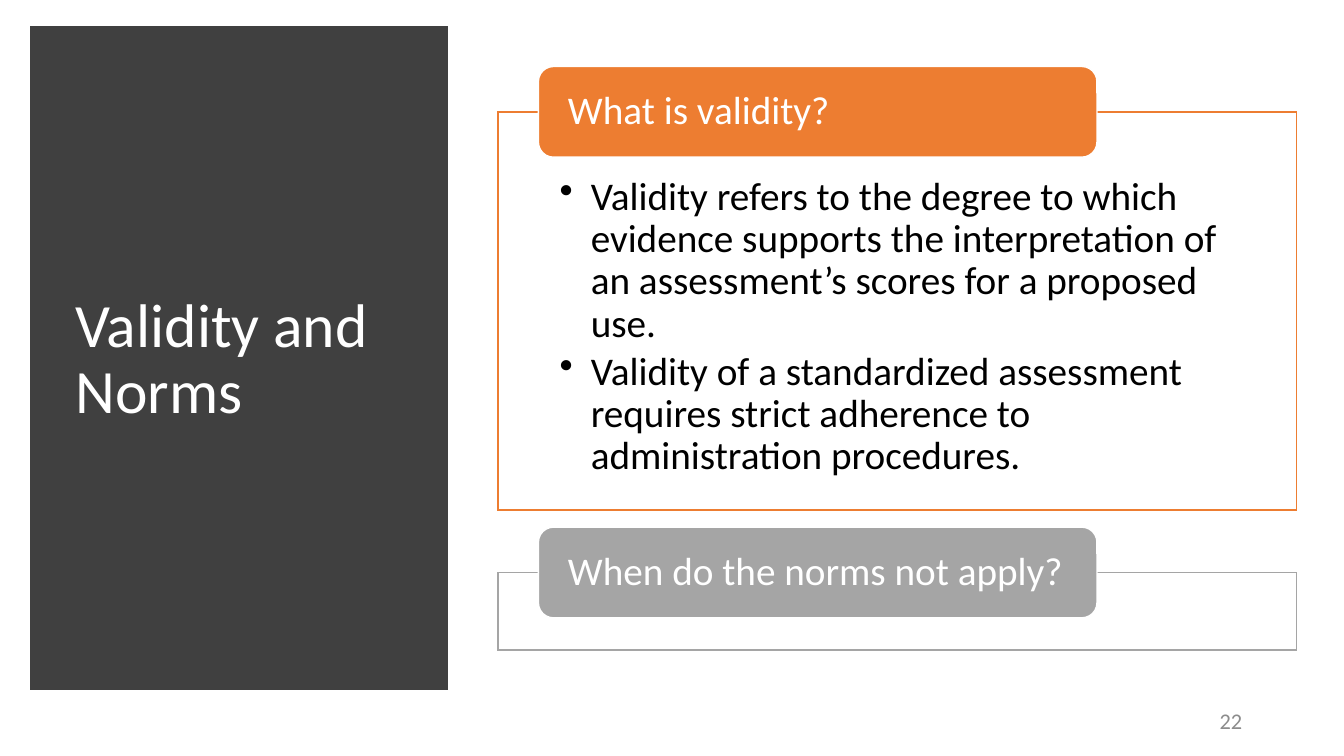
from lxml import etree
from pptx import Presentation
from pptx.dml.color import RGBColor
from pptx.enum.shapes import MSO_SHAPE
from pptx.enum.text import MSO_ANCHOR, PP_ALIGN
from pptx.oxml.ns import qn
from pptx.util import Pt

PX = 9144  # EMU per px, 100 px to the inch
RECT, ROUND = MSO_SHAPE.RECTANGLE, MSO_SHAPE.ROUNDED_RECTANGLE
TOP, MIDDLE = MSO_ANCHOR.TOP, MSO_ANCHOR.MIDDLE
LEFT, RIGHT = PP_ALIGN.LEFT, PP_ALIGN.RIGHT

WHITE = RGBColor(0xFF, 0xFF, 0xFF)
BLACK = RGBColor(0, 0, 0)
DARK = RGBColor(0x40, 0x40, 0x40)
ORANGE = RGBColor(0xED, 0x7D, 0x31)
GRAY = RGBColor(0xA5, 0xA5, 0xA5)
PALE = RGBColor(0x8C, 0x8C, 0x8C)

# Question, colour, frame top and height, bullets
TOPICS = [
    ("What is validity?", ORANGE, 111, 395, [
        "Validity refers to the degree to which evidence supports the "
        "interpretation of an assessment’s scores for a proposed use.",
        "Validity of a standardized assessment requires strict adherence "
        "to administration procedures."]),
    ("When do the norms not apply?", GRAY, 568, 77, []),
]


def add_box(slide, kind, box, fill, line, width=1):
    shape = slide.shapes.add_shape(kind, *(n * PX for n in box))
    shape.shadow.inherit = False
    shape.fill.solid()
    shape.fill.fore_color.rgb = fill
    shape.line.color.rgb = line
    shape.line.width = Pt(width)
    join = etree.SubElement(shape.line._get_or_add_ln(), qn("a:miter"))
    join.set("lim", "800000")
    return shape


def set_text(shape, lines, size, color, pads=(10, 5, 10, 5),
             anchor=MIDDLE, align=LEFT, pitch=0.9):
    frame = shape.text_frame
    frame.word_wrap = True
    frame.vertical_anchor = anchor
    (frame.margin_left, frame.margin_top,
     frame.margin_right, frame.margin_bottom) = (n * PX for n in pads)
    frame.text = "\n".join(lines)
    for par in frame.paragraphs:
        par.alignment = align
        par.line_spacing = pitch
        par.font.name = "Calibri"
        par.font.size = Pt(size)
        par.font.color.rgb = color
    return frame


def add_label(slide, box, text, size, color, **style):
    label = slide.shapes.add_textbox(*(n * PX for n in box))
    set_text(label, [text], size, color, **style)


def add_bullets(frame, indent):
    for par in frame.paragraphs:
        par.space_after = Pt(4)
        props = par._p.get_or_add_pPr()
        props.set("marL", str(indent * PX))
        props.set("indent", str(-indent * PX))
        mark = etree.SubElement(props, qn("a:buChar"))
        mark.set("char", "•")
        # The bullet goes before the default run properties
        props.find(qn("a:defRPr")).addprevious(mark)


def add_topic(slide, title, color, top, height, points):
    # Outlined frame
    frame = add_box(slide, RECT, (494, top, 792, height), WHITE, color)
    tint = frame.fill._xPr.find(qn("a:solidFill"))[0]
    etree.SubElement(tint, qn("a:alpha")).set("val", "90000")
    if points:
        body = set_text(frame, points, 28, BLACK, (61, 64, 61, 22), TOP)
        add_bullets(body, 31)
    # Tab centred on the top edge
    tab = add_box(slide, ROUND, (534, top - 45, 554, 90), color, WHITE)
    set_text(tab, [title], 28, WHITE, (25, 0, 25, 0))


def main():
    deck = Presentation()
    deck.slide_width, deck.slide_height = 1333 * PX, 750 * PX
    slide = deck.slides.add_slide(deck.slide_layouts[6])

    # Title panel
    add_box(slide, RECT, (37, 33, 400, 645), DARK, DARK, 10)
    add_label(slide, (65, 70, 346, 575), "Validity and Norms", 44, WHITE)

    # Topics
    for topic in TOPICS:
        add_topic(slide, *topic)

    # Page number
    add_label(slide, (942, 695, 300, 40), "22", 16, PALE,
              align=RIGHT, pitch=1.0)

    deck.save("out.pptx")


if __name__ == "__main__":
    main()
